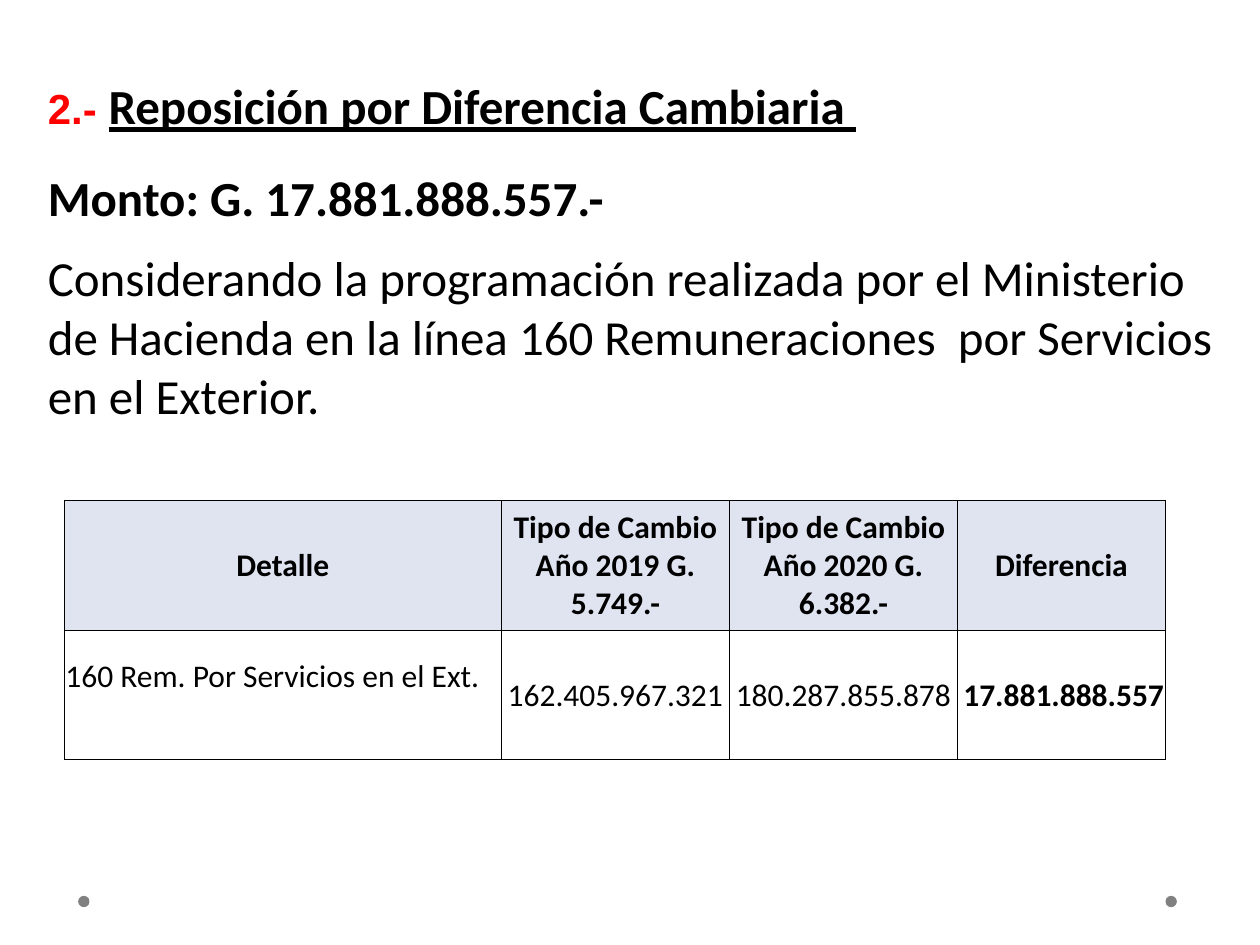
from dataclasses import dataclass

from lxml.etree import SubElement
from pptx import Presentation
from pptx.dml.color import RGBColor
from pptx.enum.shapes import MSO_SHAPE
from pptx.enum.text import MSO_ANCHOR, MSO_AUTO_SIZE, PP_ALIGN
from pptx.oxml.ns import qn
from pptx.util import Inches, Pt


@dataclass(frozen=True)
class Theme:
    black: RGBColor = RGBColor(0, 0, 0)
    red: RGBColor = RGBColor(255, 0, 0)
    gray: RGBColor = RGBColor(128, 128, 128)
    header_fill: RGBColor = RGBColor(0xDF, 0xE4, 0xF0)
    font: str = "Calibri"
    number_font: str = "Arial"
    text_size: Pt = Pt(28)
    number_size: Pt = Pt(24)
    table_size: Pt = Pt(18)
    paragraph_gap: Pt = Pt(12)
    border: Pt = Pt(0.5)


class SlideBuilder:
    columns, rows = 100, 75

    def __init__(self, presentation, theme):
        self.theme = theme
        self.column = presentation.slide_width / self.columns
        self.row = presentation.slide_height / self.rows
        self.slide = presentation.slides.add_slide(presentation.slide_layouts[1])

    def box(self, left, top, width, height):
        return (round(left * self.column), round(top * self.row),
                round(width * self.column), round(height * self.row))

    def style(self, font, size, bold=False):
        font.name = self.theme.font
        font.size = size
        font.bold = bold
        font.color.rgb = self.theme.black

    def place(self, shape, area):
        shape.left, shape.top, shape.width, shape.height = self.box(*area)
        frame = shape.text_frame
        frame.auto_size = MSO_AUTO_SIZE.NONE
        frame.vertical_anchor = MSO_ANCHOR.TOP
        frame.word_wrap = True
        return frame

    def title(self, area, number, heading):
        paragraph = self.place(self.slide.shapes.title, area).paragraphs[0]
        paragraph.alignment = PP_ALIGN.LEFT
        self.style(paragraph.font, self.theme.text_size, True)
        number_run = paragraph.add_run()
        number_run.text = number
        number_run.font.name = self.theme.number_font
        number_run.font.size = self.theme.number_size
        number_run.font.color.rgb = self.theme.red
        heading_run = paragraph.add_run()
        heading_run.text = heading
        heading_run.font.underline = True

    def body(self, area, entries):
        frame = self.place(self.slide.placeholders[1], area)
        for index, (text, bold) in enumerate(entries):
            paragraph = frame.add_paragraph() if index else frame.paragraphs[0]
            paragraph.text = text
            properties = paragraph._p.get_or_add_pPr()
            properties.set("marL", "0")
            properties.set("indent", "0")
            SubElement(properties, qn("a:buNone"))
            paragraph.space_before = self.theme.paragraph_gap if index else Pt(0)
            self.style(paragraph.font, self.theme.text_size, bold)

    def table(self, area, widths, records, alignments):
        table = self.slide.shapes.add_table(len(records), len(widths), *self.box(*area)).table
        for column, width in zip(table.columns, widths):
            column.width = round(width * self.column)
        for row_index, record in enumerate(records):
            for column_index, text in enumerate(record):
                header = row_index == 0
                alignment = PP_ALIGN.CENTER if header else alignments[column_index]
                bold = header or column_index == len(widths) - 1
                self.cell(table.cell(row_index, column_index), text, header, bold, alignment)
        return table

    def cell(self, cell, text, header, bold, alignment):
        cell.margin_left = cell.margin_right = cell.margin_top = Inches(0.01)
        cell.margin_bottom = 0
        cell.vertical_anchor = MSO_ANCHOR.MIDDLE
        for side in ("lnL", "lnR", "lnT", "lnB"):
            line = SubElement(cell._tc.get_or_add_tcPr(), qn(f"a:{side}"), w=str(self.theme.border))
            SubElement(SubElement(line, qn("a:solidFill")), qn("a:srgbClr"), val=str(self.theme.black))
        if header:
            cell.fill.solid()
            cell.fill.fore_color.rgb = self.theme.header_fill
        else:
            cell.fill.background()
        paragraph = cell.text_frame.paragraphs[0]
        paragraph.text = text
        paragraph.alignment = alignment
        self.style(paragraph.font, self.theme.table_size, bold)

    def dot(self, area):
        shape = self.slide.shapes.add_shape(MSO_SHAPE.OVAL, *self.box(*area))
        shape.shadow.inherit = False
        shape.fill.solid()
        shape.fill.fore_color.rgb = self.theme.gray
        shape.line.fill.background()


def main():
    presentation = Presentation()
    presentation.slide_width, presentation.slide_height = Inches(10), Inches(7.5)
    builder = SlideBuilder(presentation, Theme())
    for left in (6.2, 92.5):
        builder.dot((left, 71.1, 0.9, 0.9))
    builder.title((2.8, 5.5, 96.1, 6), "2.- ", "Reposición por Diferencia Cambiaria ")
    builder.body((2.8, 12.8, 96.1, 25), [
        ("Monto: G. 17.881.888.557.-", True),
        ("Considerando la programación realizada por el Ministerio de Hacienda "
         "en la línea 160 Remuneraciones  por Servicios en el Exterior.", False),
    ])
    table = builder.table(
        (5.1, 39.7, 87.4, 20.6),
        (34.7, 18.1, 18.1, 16.5),
        [
            ("Detalle", "Tipo de Cambio Año 2019 G. 5.749.-",
             "Tipo de Cambio Año 2020 G. 6.382.-", "Diferencia"),
            ("160 Rem. Por Servicios en el Ext.", "162.405.967.321",
             "180.287.855.878", "17.881.888.557"),
        ],
        (PP_ALIGN.LEFT, PP_ALIGN.CENTER, PP_ALIGN.CENTER, PP_ALIGN.RIGHT),
    )
    table.cell(1, 0).margin_bottom = Inches(0.3)
    presentation.save("out.pptx")


if __name__ == "__main__":
    main()
